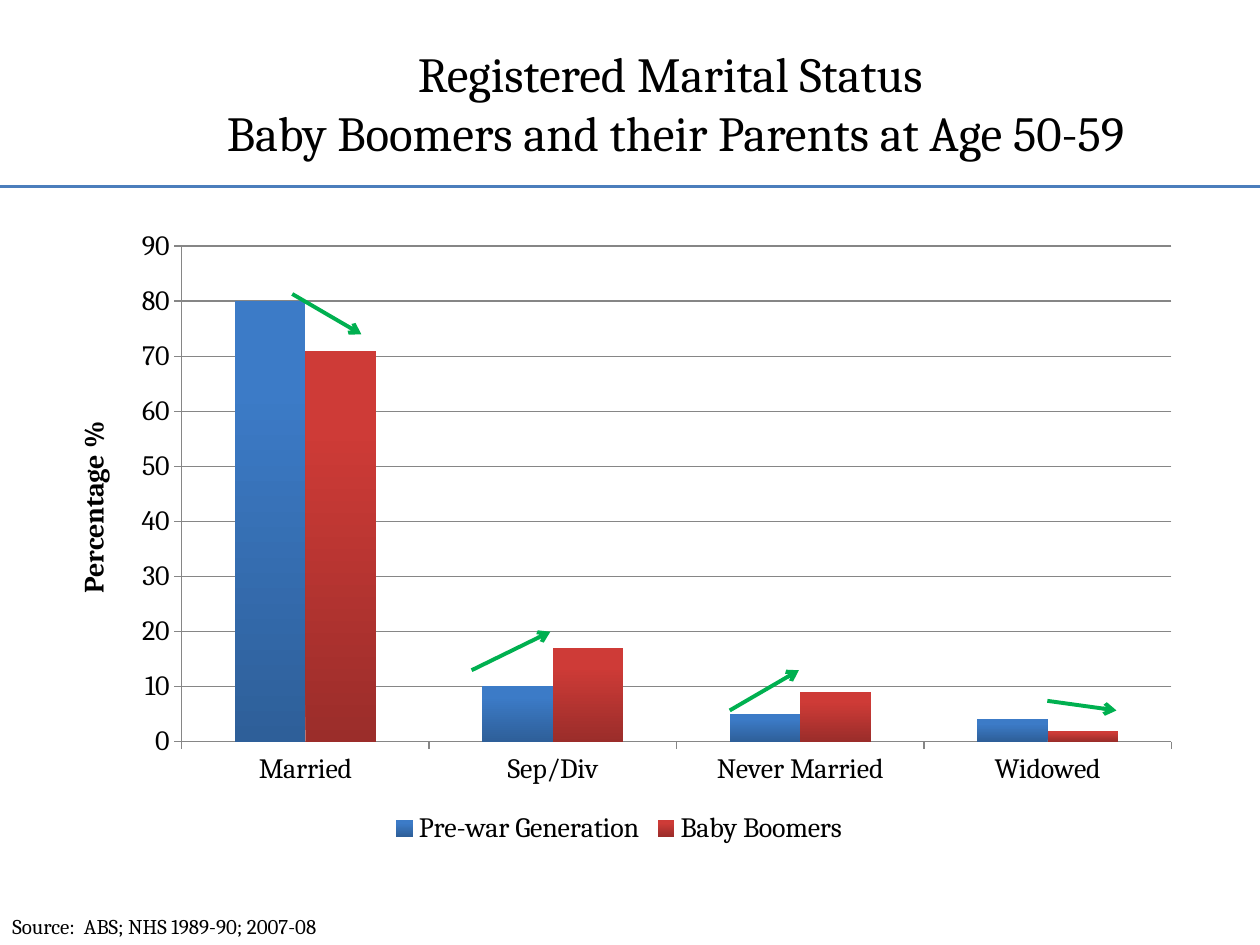
from lxml.etree import SubElement
from pptx import Presentation
from pptx.chart.data import CategoryChartData
from pptx.dml.color import RGBColor
from pptx.enum.chart import XL_CHART_TYPE, XL_LEGEND_POSITION, XL_TICK_MARK
from pptx.enum.shapes import MSO_CONNECTOR
from pptx.enum.text import MSO_ANCHOR, MSO_AUTO_SIZE, PP_ALIGN
from pptx.oxml import parse_xml
from pptx.oxml.ns import nsdecls, qn
from pptx.util import Pt

CATEGORIES = ["Married", "Sep/Div", "Never Married", "Widowed"]
# name, values, dark colour at the foot, light colour at the top
SERIES = [
    ("Pre-war Generation", (80, 10, 5, 4), "2E5F99", "3C7BC7"),
    ("Baby Boomers", (71, 17, 9, 2), "9B2D2A", "CE3B37"),
]
TREND_ARROWS = [
    (167, 168, 206.5, 191),
    (269.5, 383, 314.5, 361),
    (417, 406, 456.5, 383),
    (598.5, 400.5, 638, 406),
]
PLOT_AREA = {"x": 0.12, "y": 0.05, "w": 0.86, "h": 0.78}


def color(value):
    return RGBColor.from_string(value)


def points(*lengths):
    return [Pt(length) for length in lengths]


class SlideBuilder:
    """Holds the style and the page being drawn on."""

    font_name = "Cambria"
    text_color = "000000"
    grid_color = "868686"

    def __init__(self, page):
        self.page = page

    def style_font(self, font, size, bold=False):
        formats = {"name": self.font_name, "size": Pt(size), "bold": bold}
        for key, value in formats.items():
            setattr(font, key, value)
        font.color.rgb = color(self.text_color)

    def title(self, text, box, size):
        title = self.page.shapes.title
        for key, value in zip(("left", "top", "width", "height"), points(*box)):
            setattr(title, key, value)
        frame = title.text_frame
        frame.text = text
        frame.word_wrap = True
        frame.auto_size = MSO_AUTO_SIZE.NONE
        frame.vertical_anchor = MSO_ANCHOR.MIDDLE
        para = frame.paragraphs[0]
        para.alignment = PP_ALIGN.CENTER
        for span in para.runs:
            self.style_font(span.font, size)

    def text(self, text, box, size):
        frame = self.page.shapes.add_textbox(*points(*box)).text_frame
        frame.word_wrap = True
        frame.auto_size = MSO_AUTO_SIZE.SHAPE_TO_FIT_TEXT
        frame.text = text
        self.style_font(frame.paragraphs[0].runs[0].font, size)

    def line(self, ends, line_color, width, arrow=False):
        connector = self.page.shapes.add_connector(MSO_CONNECTOR.STRAIGHT, *points(*ends))
        connector.line.color.rgb = color(line_color)
        connector.line.width = Pt(width)
        properties = connector._element.spPr
        if arrow:
            SubElement(properties.find(qn("a:ln")), qn("a:tailEnd"), type="arrow")
        SubElement(properties, qn("a:effectLst"))

    def column_chart(self, box, size, value_title):
        data = CategoryChartData()
        data.categories = CATEGORIES
        for name, values, _, _ in SERIES:
            data.add_series(name, values)
        chart = self.page.shapes.add_chart(
            XL_CHART_TYPE.COLUMN_CLUSTERED, *points(*box), data).chart
        self.style_font(chart.font, size)
        chart.has_title = False
        chart.has_legend = True
        chart.legend.position = XL_LEGEND_POSITION.BOTTOM
        chart.legend.include_in_layout = False
        self.style_font(chart.legend.font, size)

        plot = chart.plots[0]
        plot.gap_width = 150
        plot.overlap = 0
        plot.vary_by_categories = False
        for series, (_, _, dark, light) in zip(plot.series, SERIES):
            series.invert_if_negative = False
            fill = series.format.fill
            fill.gradient()
            fill.gradient_angle = 90
            for stop, stop_color, position in zip(fill.gradient_stops, (dark, light), (0, 0.8)):
                stop.color.rgb = color(stop_color)
                stop.position = position

        for axis in (chart.category_axis, chart.value_axis):
            axis.major_tick_mark = XL_TICK_MARK.OUTSIDE
            axis.minor_tick_mark = XL_TICK_MARK.NONE
            axis.format.line.color.rgb = color(self.grid_color)
            self.style_font(axis.tick_labels.font, size)
        value_axis = chart.value_axis
        scale = {"minimum_scale": 0, "maximum_scale": 90, "major_unit": 10,
                 "has_major_gridlines": True}
        for key, value in scale.items():
            setattr(value_axis, key, value)
        value_axis.major_gridlines.format.line.color.rgb = color(self.grid_color)
        frame = value_axis.axis_title.text_frame
        frame.text = value_title
        self.style_font(frame.paragraphs[0].runs[0].font, size, bold=True)
        self.place_plot(chart)

    def place_plot(self, chart):
        """Fix the inner plot area so that the arrows meet the columns."""
        area = chart._chartSpace.chart.plotArea
        for layout in area.findall(qn("c:layout")):
            area.remove(layout)
        layout = parse_xml(f"<c:layout {nsdecls('c')}/>")
        manual = SubElement(layout, qn("c:manualLayout"))
        settings = {"layoutTarget": "inner", "xMode": "edge", "yMode": "edge", **PLOT_AREA}
        for tag, value in settings.items():
            SubElement(manual, qn(f"c:{tag}"), val=str(value))
        area.insert(0, layout)


def main():
    deck = Presentation()
    deck.slide_width, deck.slide_height = points(720, 540)
    builder = SlideBuilder(deck.slides.add_slide(deck.slide_layouts[5]))
    builder.title("Registered Marital Status \vBaby Boomers and their Parents at Age 50-59",
                  (72, 21, 628, 75), 28)
    builder.line((0, 106.5, 720, 106.5), "4B7EBC", 1.5)
    builder.text("Source:  ABS; NHS 1989-90; 2007-08", (0, 518.5, 232.5, 21.5), 12)
    builder.column_chart((25, 122.5, 657.5, 363), 16, "Percentage %")
    for ends in TREND_ARROWS:
        builder.line(ends, "00B050", 2.25, arrow=True)
    deck.save("out.pptx")


if __name__ == "__main__":
    main()
